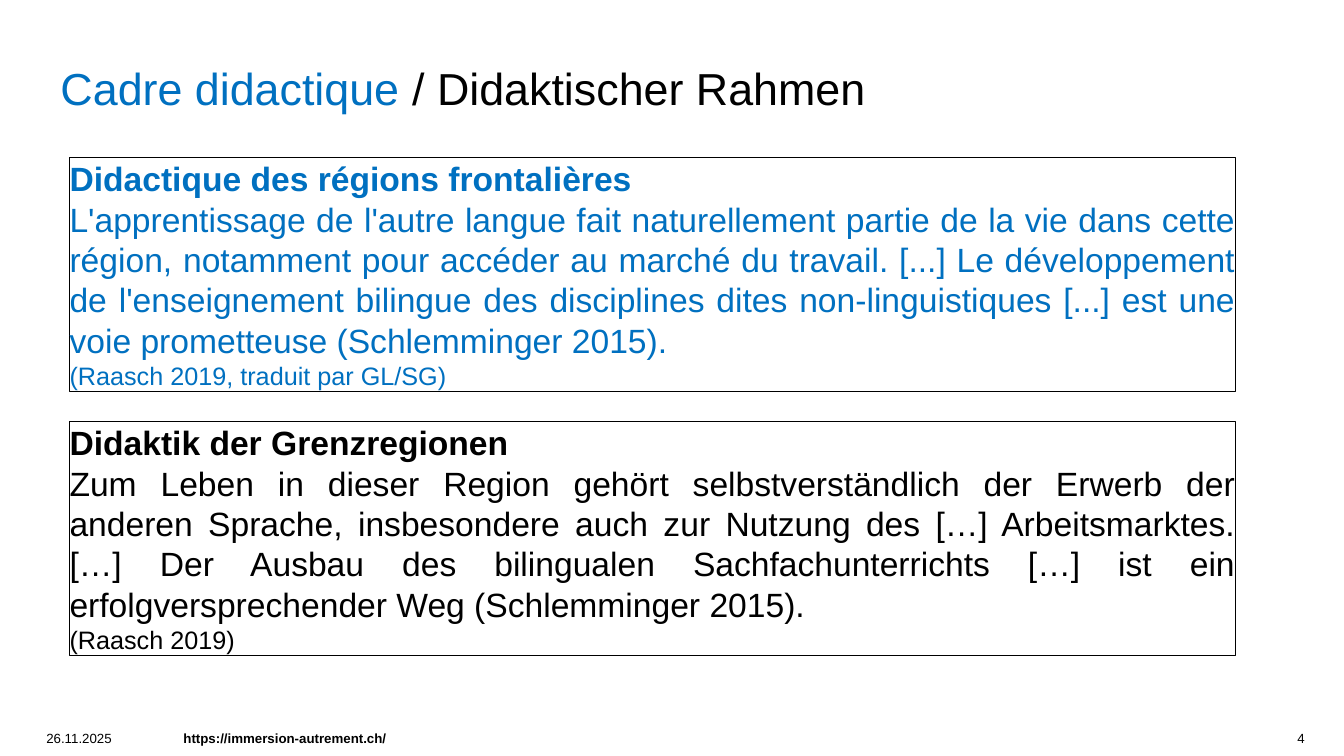
from pptx import Presentation
from pptx import util as u
from pptx.dml.color import RGBColor
from pptx.enum import shapes, text

PX = 9144
BLUE = "0070C0"
BLACK = "000000"
FRENCH = [
    "Didactique des régions frontalières",
    "L'apprentissage de l'autre langue fait naturellement partie de la vie dans cette région, "
    "notamment pour accéder au marché du travail. [...] Le développement de l'enseignement "
    "bilingue des disciplines dites non-linguistiques [...] est une voie prometteuse "
    "(Schlemminger 2015).",
    "(Raasch 2019, traduit par GL/SG)",
]
GERMAN = [
    "Didaktik der Grenzregionen",
    "Zum Leben in dieser Region gehört selbstverständlich der Erwerb der anderen Sprache, "
    "insbesondere auch zur Nutzung des […] Arbeitsmarktes. […] Der Ausbau des bilingualen "
    "Sachfachunterrichts […] ist ein erfolgversprechender Weg (Schlemminger 2015).",
    "(Raasch 2019)",
]


def color(code):
    return RGBColor.from_string(code)


def style(run, size, code, bold=False):
    font = run.font
    font.name = "Arial"
    font.size = u.Pt(size)
    font.bold = bold
    font.color.rgb = color(code)


def setup(frame, anchor):
    frame.margin_left = frame.margin_right = 0
    frame.margin_top = frame.margin_bottom = 0
    frame.word_wrap = True
    frame.auto_size = text.MSO_AUTO_SIZE.NONE
    frame.vertical_anchor = anchor


def place(*box):
    return [n * PX for n in box]


def add_title(slide, parts):
    title = slide.shapes.title
    title.left, title.top, title.width, title.height = place(60, 60, 1213, 54)
    setup(title.text_frame, text.MSO_ANCHOR.BOTTOM)
    para = title.text_frame.paragraphs[0]
    para.alignment = text.PP_ALIGN.LEFT
    for words, code in parts:
        run = para.add_run()
        run.text = words
        style(run, 32, code)


def add_quote(slide, top, lines, code):
    box = slide.shapes.add_shape(shapes.MSO_SHAPE.RECTANGLE, *place(69, top, 1156, 232))
    box.shadow.inherit = False
    box.fill.background()
    box.line.color.rgb = color(BLACK)
    box.line.width = u.Pt(0.75)
    frame = box.text_frame
    setup(frame, text.MSO_ANCHOR.MIDDLE)
    frame.text = "\n".join(lines)
    looks = [(24, True), (24, False), (18, False)]
    for para, (size, bold) in zip(frame.paragraphs, looks):
        para.alignment = text.PP_ALIGN.JUSTIFY
        para.line_spacing = 1.0
        style(para.runs[0], size, code, bold)


def add_footer(slide, left, width, words, align=text.PP_ALIGN.LEFT, bold=False):
    frame = slide.shapes.add_textbox(*place(left, 724, width, 16)).text_frame
    setup(frame, text.MSO_ANCHOR.BOTTOM)
    frame.text = words
    para = frame.paragraphs[0]
    para.alignment = align
    style(para.runs[0], 9.5, BLACK, bold)


def main():
    deck = Presentation()
    deck.slide_width, deck.slide_height = place(1333, 750)
    slide = deck.slides.add_slide(deck.slide_layouts[5])
    add_title(slide, [("Cadre didactique ", BLUE), ("/ Didaktischer Rahmen", BLACK)])
    add_footer(slide, 46, 130, "26.11.2025")
    add_footer(slide, 182, 886, "https://immersion-autrement.ch/", bold=True)
    add_footer(slide, 1253, 41, "4", align=text.PP_ALIGN.RIGHT)
    add_quote(slide, 156, FRENCH, BLUE)
    add_quote(slide, 418, GERMAN, BLACK)
    deck.save("out.pptx")


if __name__ == "__main__":
    main()
